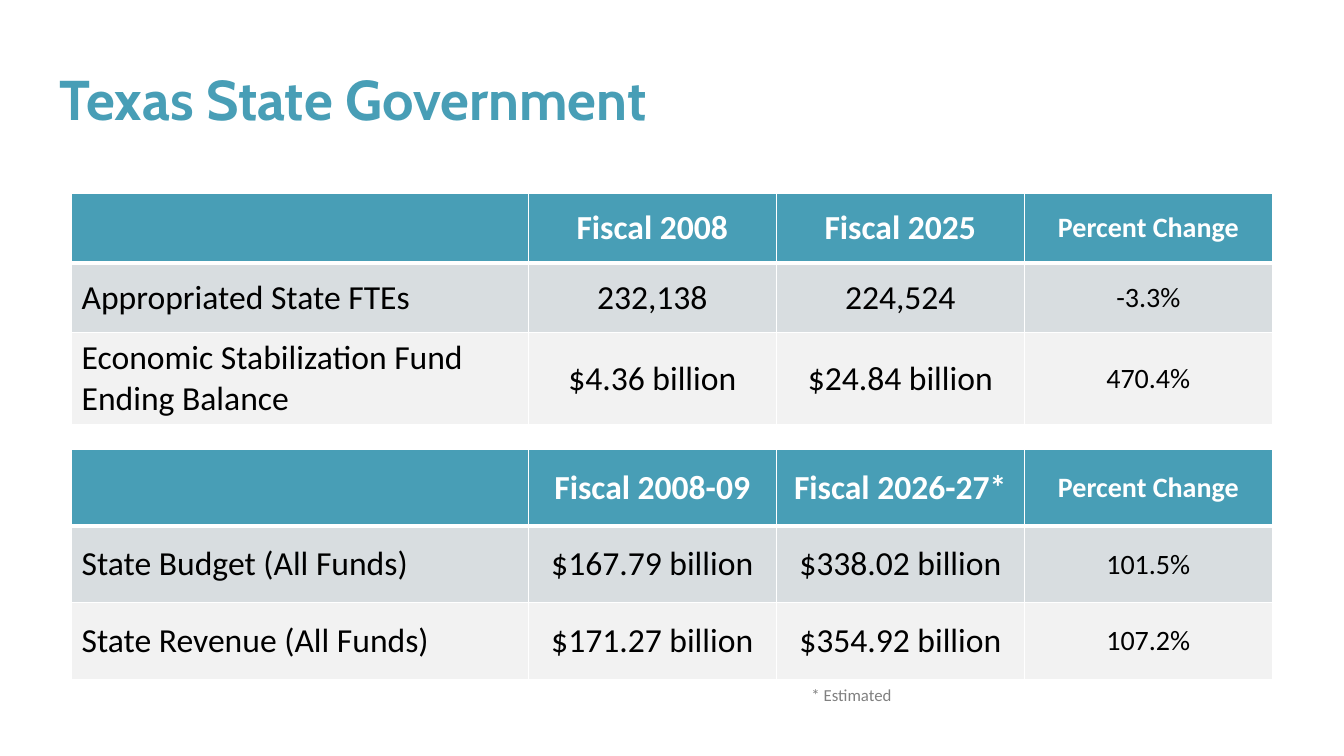
from dataclasses import dataclass

from lxml.etree import SubElement
from pptx import Presentation
from pptx.dml.color import RGBColor as RGB
from pptx.enum.text import MSO_ANCHOR as Anchor, MSO_AUTO_SIZE as AutoSize, PP_ALIGN as Align
from pptx.oxml.ns import qn
from pptx.util import Emu, Pt


@dataclass(frozen=True)
class Theme:
    teal: str = "489EB6"
    band: str = "D8DDE0"
    pale: str = "F2F2F2"
    white: str = "FFFFFF"
    black: str = "000000"
    gray: str = "808080"
    head_font: str = "Cabin"
    body_font: str = "Calibri"
    title_size: int = 40
    cell_size: int = 24
    change_size: int = 20
    note_size: int = 12


TH = Theme()
COLS = [453, 246, 246, 246]
ANNUAL = [
    ["", "Fiscal 2008", "Fiscal 2025", "Percent Change"],
    ["Appropriated State FTEs", "232,138", "224,524", "-3.3%"],
    ["Economic Stabilization Fund Ending Balance", "$4.36 billion", "$24.84 billion", "470.4%"],
]
BIENNIAL = [
    ["", "Fiscal 2008-09", "Fiscal 2026-27*", "Percent Change"],
    ["State Budget (All Funds)", "$167.79 billion", "$338.02 billion", "101.5%"],
    ["State Revenue (All Funds)", "$171.27 billion", "$354.92 billion", "107.2%"],
]


def px(n):
    return Emu(n * 9144)


def add_run(p, text, size, color, font=TH.body_font, bold=False):
    r = p.add_run()
    r.text = text
    r.font.size = Pt(size)
    r.font.name = font
    r.font.bold = bold
    r.font.color.rgb = RGB.from_string(color)


def set_borders(cell, top, bottom):
    tcPr = cell._tc.get_or_add_tcPr()
    sides = {"a:lnL": 1, "a:lnR": 1, "a:lnT": top, "a:lnB": bottom}
    for i, (tag, width) in enumerate(sides.items()):
        ln = tcPr.makeelement(qn(tag), {"w": str(Pt(width))})
        fill = SubElement(ln, qn("a:solidFill"))
        SubElement(fill, qn("a:srgbClr"), val=TH.white)
        tcPr.insert(i, ln)


def add_title(slide, box, text):
    sp = slide.shapes.title
    sp.left, sp.top, sp.width, sp.height = map(px, box)
    tf = sp.text_frame
    tf.auto_size = AutoSize.NONE
    tf.vertical_anchor = Anchor.MIDDLE
    tf.margin_top = tf.margin_bottom = 0
    p = tf.paragraphs[0]
    p.alignment = Align.LEFT
    p.line_spacing = 1.25
    add_run(p, text, TH.title_size, TH.teal, TH.head_font, True)


def add_comparison(slide, left, top, row_height, rows):
    tbl = slide.shapes.add_table(
        len(rows), len(COLS), px(left), px(top), px(sum(COLS)), px(row_height * len(rows))
    ).table
    for col, width in zip(tbl.columns, COLS):
        col.width = px(width)
    for i, values in enumerate(rows):
        tbl.rows[i].height = px(row_height)
        header = i == 0
        for j, text in enumerate(values):
            cell = tbl.cell(i, j)
            cell.fill.solid()
            cell.fill.fore_color.rgb = RGB.from_string((TH.teal, TH.band, TH.pale)[i])
            cell.vertical_anchor = Anchor.MIDDLE
            set_borders(cell, 3 if i == 1 else 1, 3 if header else 1)
            if text:
                p = cell.text_frame.paragraphs[0]
                p.alignment = Align.CENTER if j else Align.LEFT
                size = TH.change_size if j == len(COLS) - 1 else TH.cell_size
                add_run(p, text, size, TH.white if header else TH.black, bold=header)


def add_note(slide, box, text):
    tf = slide.shapes.add_textbox(*map(px, box)).text_frame
    tf.word_wrap = False
    tf.auto_size = AutoSize.SHAPE_TO_FIT_TEXT
    add_run(tf.paragraphs[0], text, TH.note_size, TH.gray)


def main():
    prs = Presentation()
    prs.slide_width, prs.slide_height = px(1333), px(750)
    slide = prs.slides.add_slide(prs.slide_layouts.get_by_name("Title Only"))
    slide.background.fill.solid()
    slide.background.fill.fore_color.rgb = RGB.from_string(TH.white)
    add_title(slide, (49, 47, 1284, 83), "Texas State Government")
    add_comparison(slide, 71, 192, 69, ANNUAL)
    add_comparison(slide, 71, 446, 76, BIENNIAL)
    add_note(slide, (795, 674, 101, 30), "* Estimated")
    prs.save("out.pptx")


if __name__ == "__main__":
    main()
